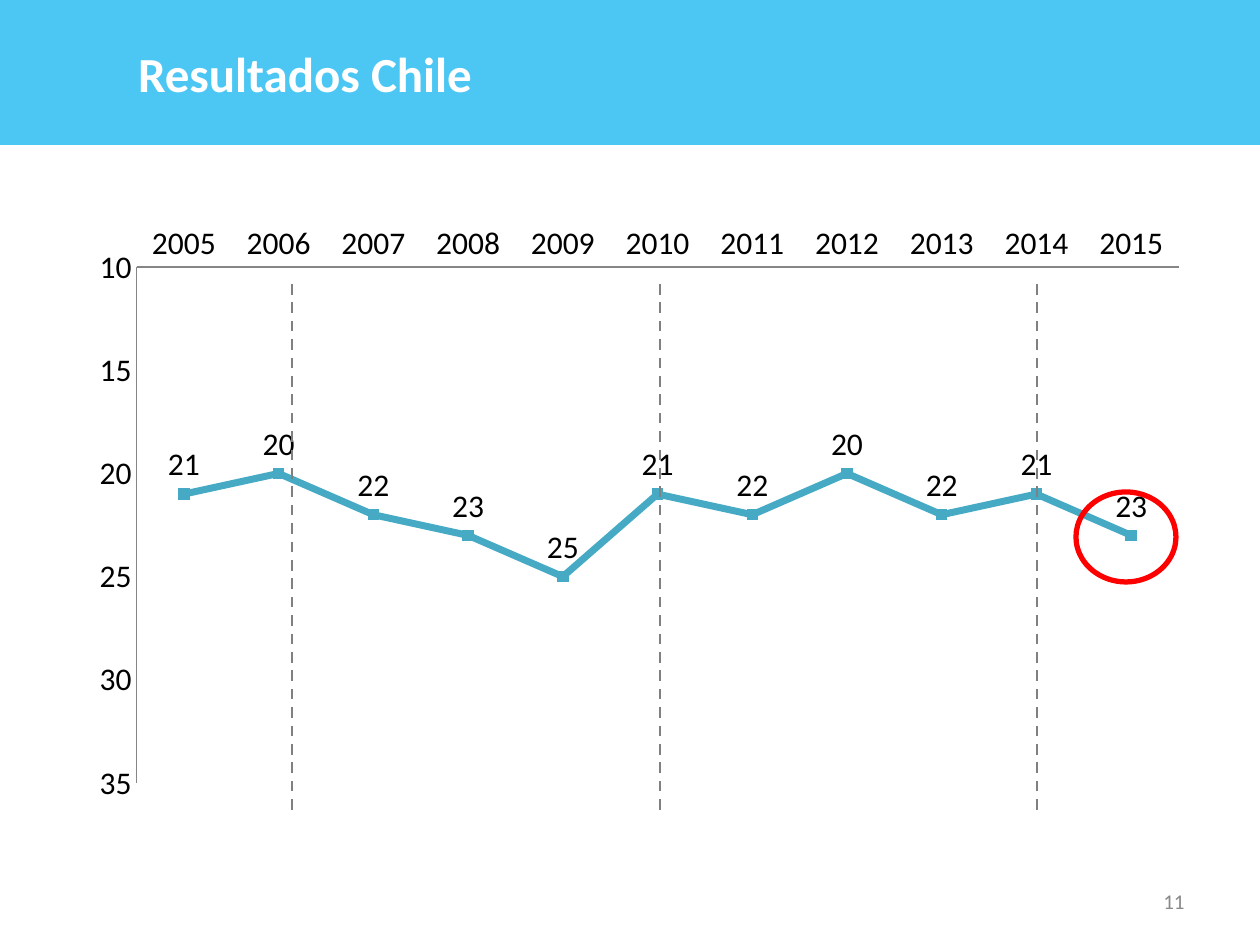
from lxml import etree
from pptx import Presentation
from pptx.chart.data import CategoryChartData
from pptx.dml.color import RGBColor
from pptx.enum.chart import XL_CHART_TYPE, XL_LABEL_POSITION, XL_MARKER_STYLE, XL_TICK_MARK
from pptx.enum.dml import MSO_LINE
from pptx.enum.shapes import MSO_CONNECTOR, MSO_SHAPE
from pptx.enum.text import MSO_ANCHOR, PP_ALIGN
from pptx.oxml import parse_xml
from pptx.oxml.ns import qn
from pptx.util import Pt

LINE_MARKERS = XL_CHART_TYPE.LINE_MARKERS
ABOVE = XL_LABEL_POSITION.ABOVE
SQUARE = XL_MARKER_STYLE.SQUARE
NO_TICK = XL_TICK_MARK.NONE
DASH = MSO_LINE.DASH
STRAIGHT = MSO_CONNECTOR.STRAIGHT
OVAL = MSO_SHAPE.OVAL
MIDDLE = MSO_ANCHOR.MIDDLE
LEFT, RIGHT = PP_ALIGN.LEFT, PP_ALIGN.RIGHT

FONT = "Calibri"
COLORS = {"banner": "00B0F0", "white": "FFFFFF", "black": "000000", "series": "46AAC5",
          "axis": "868686", "dash": "808080", "ring": "FF0000", "number": "898989"}


def px(n):
    return int(n * 914400 / 126)


def rgb(name):
    return RGBColor.from_string(COLORS[name])


prs = Presentation()
prs.slide_width, prs.slide_height = px(1260), px(945)
s = prs.slides.add_slide(prs.slide_layouts[5])

# Title banner
title = s.shapes.title
banner = {"left": 0, "top": 0, "width": px(1260), "height": px(145)}
for name, value in banner.items():
    setattr(title, name, value)
title.fill.solid()
title.fill.fore_color.rgb = rgb("banner")
fill_color = title.fill._xPr.find(qn("a:solidFill"))[0]
etree.SubElement(fill_color, qn("a:alpha")).set("val", "70000")
title.text_frame.margin_left = px(138)

# Slide number
number = s.shapes.add_textbox(px(903), px(876), px(294), px(50))
number.text_frame.word_wrap = True

# Text of title and number
texts = [(title, "Resultados Chile", LEFT, "white", {"size": Pt(28), "bold": True}),
         (number, "11", RIGHT, "number", {"size": Pt(12), "bold": False})]
for sp, text, align, color, fmt in texts:
    tf = sp.text_frame
    tf.vertical_anchor = MIDDLE
    p = tf.paragraphs[0]
    p.alignment = align
    r = p.add_run()
    r.text = text
    r.font.name = FONT
    r.font.color.rgb = rgb(color)
    for name, value in fmt.items():
        setattr(r.font, name, value)

# Line chart of the yearly results
data = CategoryChartData()
data.categories = [str(year) for year in range(2005, 2016)]
data.add_series("Series 1", (21, 20, 22, 23, 25, 21, 22, 20, 22, 21, 23))
chart = s.shapes.add_chart(LINE_MARKERS, px(64), px(224), px(1134), px(624), data).chart
chart.has_legend = False
chart.has_title = False
chart.font.name = FONT
chart.font.size = Pt(18)
chart.font.color.rgb = rgb("black")

# Axes, with the lowest value at the top
value_axis = chart.value_axis
scale = {"minimum_scale": 10, "maximum_scale": 35, "major_unit": 5,
         "reverse_order": True, "has_major_gridlines": False}
for name, value in scale.items():
    setattr(value_axis, name, value)
for axis in (chart.category_axis, value_axis):
    axis.major_tick_mark = axis.minor_tick_mark = NO_TICK
    axis.format.line.color.rgb = rgb("axis")
    axis.format.line.width = Pt(0.75)

# Series and its labels
plot = chart.plots[0]
plot.vary_by_categories = False
series = plot.series[0]
series.smooth = False
series.format.line.color.rgb = rgb("series")
series.format.line.width = Pt(4)
marker = series.marker
marker.style = SQUARE
marker.size = 6
marker.format.fill.solid()
marker.format.fill.fore_color.rgb = rgb("series")
marker.format.line.color.rgb = rgb("series")
labels = series.data_labels
labels.show_value = True
labels.position = ABOVE

# Fixed inner plot area
plot_area = chart._chartSpace.chart.plotArea
for old in plot_area.findall(qn("c:layout")):
    plot_area.remove(old)
layout = parse_xml('<c:layout xmlns:c="http://schemas.openxmlformats.org/drawingml/2006/chart">'
                   '<c:manualLayout/></c:layout>')
settings = {"layoutTarget": "inner", "xMode": "edge", "yMode": "edge",
            "x": "0.064", "y": "0.069", "w": "0.919", "h": "0.827"}
for name, value in settings.items():
    etree.SubElement(layout[0], qn("c:" + name)).set("val", value)
plot_area.insert(0, layout)

# Ring around the last result
ring = s.shapes.add_shape(OVAL, px(1076), px(492), px(100), px(90))
ring.shadow.inherit = False
ring.fill.background()
ring.line.color.rgb = rgb("ring")
ring.line.width = Pt(3)

# Dashed period dividers
for x in (1037, 660, 292):
    divider = s.shapes.add_connector(STRAIGHT, px(x), px(284), px(x), px(810))
    divider.line.color.rgb = rgb("dash")
    divider.line.width = Pt(1.5)
    divider.line.dash_style = DASH
    etree.SubElement(divider._element.spPr, qn("a:effectLst"))

prs.save("out.pptx")
